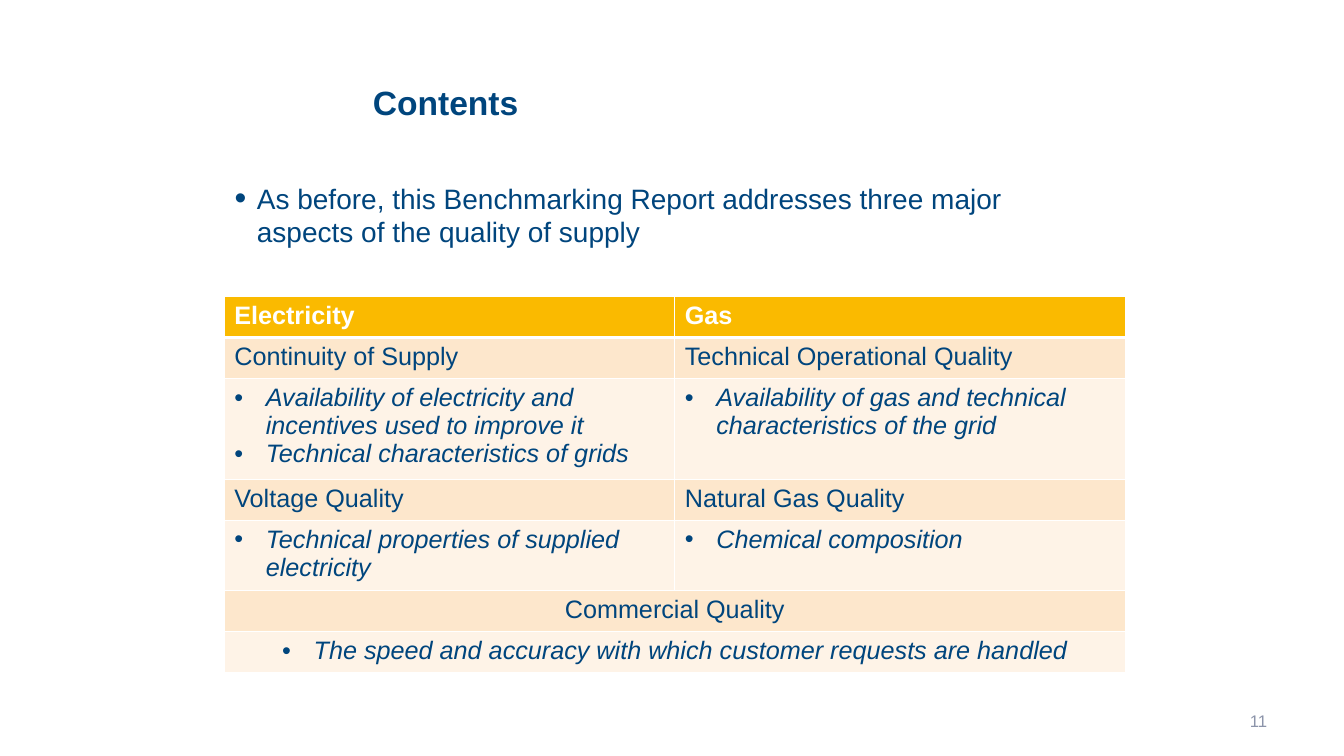
from dataclasses import dataclass

import pptx
import pptx.dml.color
import pptx.enum.text
import pptx.oxml
import pptx.oxml.ns
import pptx.util

Pt = pptx.util.Pt
ALIGN = pptx.enum.text.PP_ALIGN
MIDDLE = pptx.enum.text.MSO_ANCHOR.MIDDLE


@dataclass(frozen=True)
class Theme:
    font: str = "Arial"
    navy: str = "00457D"
    white: str = "FFFFFF"
    grey: str = "8C94AA"
    header: str = "FABA00"
    topic: str = "FDE7CC"
    detail: str = "FEF3E7"
    title_size: int = 24
    body_size: int = 20
    table_size: int = 18
    number_size: int = 12


theme = Theme()


def write(tf, *lines, size, color=theme.navy, bold=False, italic=False,
          align=ALIGN.LEFT, indent=None, hanging=0, bullet_scale=100):
    """Fill a text frame, one paragraph a line; an indent turns on bullets."""
    tf.word_wrap = True
    for i, text in enumerate(lines):
        p = tf.paragraphs[0] if i == 0 else tf.add_paragraph()
        p.alignment = align
        if indent is not None:
            pPr = p._p.get_or_add_pPr()
            pPr.set("marL", str(Pt(indent)))
            pPr.set("indent", str(-Pt(hanging)))
            size_el = pptx.oxml.ns.qn("a:buSzPct")
            pPr.makeelement(size_el)
            for tag, key, value in (("buSzPct", "val", bullet_scale * 1000),
                                    ("buFont", "typeface", theme.font),
                                    ("buChar", "char", "•")):
                el = pPr.makeelement(pptx.oxml.ns.qn(f"a:{tag}"))
                el.set(key, str(value))
                pPr.append(el)
        r = p.add_run()
        r.text = text
        r.font.name = theme.font
        r.font.size = Pt(size)
        r.font.bold = bold
        r.font.italic = italic
        r.font.color.rgb = pptx.dml.color.RGBColor.from_string(color)


def set_borders(cell, **widths):
    tcPr = cell._tc.get_or_add_tcPr()
    for i, side in enumerate("LRTB"):
        tcPr.insert(i, pptx.oxml.parse_xml(
            f'<a:ln{side} {pptx.oxml.ns.nsdecls("a")} w="{Pt(widths.get(side, 1))}">'
            f'<a:solidFill><a:srgbClr val="{theme.white}"/></a:solidFill></a:ln{side}>'))


prs = pptx.Presentation()
prs.slide_width, prs.slide_height = Pt(960), Pt(540)
s = prs.slides.add_slide(prs.slide_layouts[6])

# Title, introduction and slide number
title = s.shapes.add_textbox(Pt(259.2), Pt(34.6), Pt(510.5), Pt(77))
title.text_frame.vertical_anchor = MIDDLE
write(title.text_frame, "Contents", size=theme.title_size, bold=True)

intro = s.shapes.add_textbox(Pt(156.2), Pt(126), Pt(590.4), Pt(356.4))
write(intro.text_frame,
      "As before, this Benchmarking Report addresses three major aspects of the quality of supply",
      size=theme.body_size, indent=20.2, hanging=15.8, bullet_scale=120)

number = s.shapes.add_textbox(Pt(688.3), Pt(500.4), Pt(223.9), Pt(28.8))
number.text_frame.vertical_anchor = MIDDLE
write(number.text_frame, "11", size=theme.number_size, color=theme.grey, align=ALIGN.RIGHT)

# Table: a header, then topic and detail rows in turn; a lone entry spans both columns
rows = [
    (29.2, [["Electricity"], ["Gas"]]),
    (29.2, [["Continuity of Supply"], ["Technical Operational Quality"]]),
    (67.5, [["Availability of electricity and incentives used to improve it",
             "Technical characteristics of grids"],
            ["Availability of gas and technical characteristics of the grid"]]),
    (29.2, [["Voltage Quality"], ["Natural Gas Quality"]]),
    (47.2, [["Technical properties of supplied electricity"], ["Chemical composition"]]),
    (29.2, [["Commercial Quality"]]),
    (29.2, [["The speed and accuracy with which customer requests are handled"]]),
]
header_style = dict(color=theme.white, bold=True)
detail_style = dict(italic=True, indent=22.5, hanging=22.5)

frame = s.shapes.add_table(len(rows), 2, Pt(160.2), Pt(211.9), Pt(643.6),
                           Pt(sum(height for height, _ in rows)))
table = frame.table
table.horz_banding = False
for y, (height, entries) in enumerate(rows):
    table.rows[y].height = Pt(height)
    if y == 0:
        fill, style = theme.header, header_style
    elif y % 2:
        fill, style = theme.topic, {}
    else:
        fill, style = theme.detail, detail_style
    for x in range(2):
        cell = table.cell(y, x)
        cell.fill.solid()
        cell.fill.fore_color.rgb = pptx.dml.color.RGBColor.from_string(fill)
        set_borders(cell, T=3 if y == 1 else 1, B=3 if y == 0 else 1)
    spans = len(entries) == 1
    if spans:
        table.cell(y, 0).merge(table.cell(y, 1))
    for x, lines in enumerate(entries):
        write(table.cell(y, x).text_frame, *lines, size=theme.table_size,
              align=ALIGN.CENTER if spans else ALIGN.LEFT, **style)

prs.save("out.pptx")
